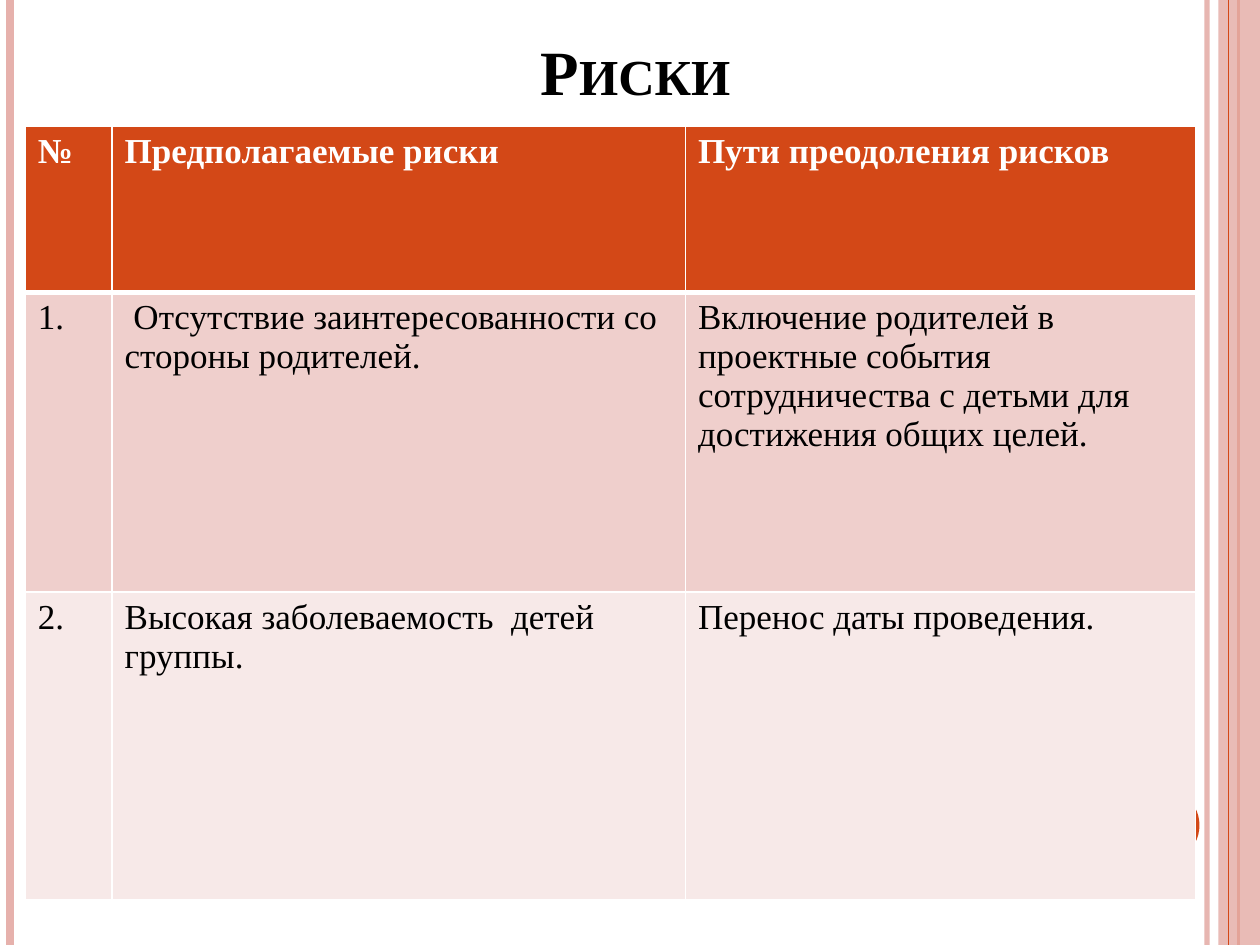
from lxml.etree import SubElement
from pptx import Presentation
from pptx.dml.color import RGBColor
from pptx.enum.shapes import MSO_CONNECTOR, MSO_SHAPE
from pptx.enum.text import MSO_ANCHOR, PP_ALIGN
from pptx.oxml import parse_xml
from pptx.oxml.ns import nsdecls, qn
from pptx.util import Inches, Pt

# Content
TITLE = "Риски"
ROWS = [
    ("№", "Предполагаемые риски", "Пути преодоления рисков"),
    ("1.", " Отсутствие заинтересованности со стороны родителей.",
     "Включение родителей в проектные события сотрудничества с детьми "
     "для достижения общих целей."),
    ("2.", "Высокая заболеваемость  детей группы.",
     "Перенос даты проведения."),
]
WIDTHS = [0.69, 4.55, 4.05]
HEIGHTS = [1.32, 2.38, 2.44]

FONT = "Times New Roman"
COLORS = {"accent": "D34817", "pink": "E6B1AC", "white": "FFFFFF",
          "black": "000000", "band1": "EFCFCC", "band2": "F7E9E8"}
FILLS = ["accent", "band1", "band2"]

# Vertical stripes: x, color, width in points, opacity in percent
BACK = [(9.58, "pink", 3, 93), (0.08, "pink", 4.5, 100),
        (9.83, "accent", 1.5, 100)]
FRONT = [(9.75, "accent", 0.75, 100)]


def rgb(name):
    return RGBColor.from_string(COLORS[name])


def fade(part, alpha):
    if alpha < 100:
        color = next(part.iter(qn("a:srgbClr")))
        SubElement(color, qn("a:alpha")).set("val", str(alpha * 1000))


def add_stripe(slide, x, color, width, alpha):
    line = slide.shapes.add_connector(
        MSO_CONNECTOR.STRAIGHT, Inches(x), 0, Inches(x), Inches(7.5))
    line.line.color.rgb = rgb(color)
    line.line.width = Pt(width)
    props = line._element.spPr
    fade(props, alpha)
    SubElement(props, qn("a:effectLst"))


def add_block(slide, kind, box, color, alpha=100):
    shape = slide.shapes.add_shape(kind, *map(Inches, box))
    shape.shadow.inherit = False
    shape.fill.solid()
    shape.fill.fore_color.rgb = rgb(color)
    shape.line.fill.background()
    fade(shape._element.spPr, alpha)


def add_run(par, text, size, color, bold):
    run = par.add_run()
    run.text = text
    font = run.font
    font.name, font.size, font.bold = FONT, Pt(size), bold
    font.color.rgb = rgb(color)
    return run


def set_edges(cell, top, bottom):
    props = cell._tc.get_or_add_tcPr()
    edges = [("L", 1), ("R", 1), ("T", top), ("B", bottom)]
    for i, (side, width) in enumerate(edges):
        props.insert(i, parse_xml(
            f'<a:ln{side} {nsdecls("a")} w="{Pt(width)}"><a:solidFill>'
            f'<a:srgbClr val="{COLORS["white"]}"/></a:solidFill></a:ln{side}>'))


def add_grid(slide):
    frame = slide.shapes.add_table(
        len(ROWS), len(WIDTHS), Inches(0.2), Inches(1),
        Inches(sum(WIDTHS)), Inches(sum(HEIGHTS)))
    table = frame.table
    for col, width in zip(table.columns, WIDTHS):
        col.width = Inches(width)
    for r, texts in enumerate(ROWS):
        table.rows[r].height = Inches(HEIGHTS[r])
        head = r == 0
        for c, text in enumerate(texts):
            cell = table.cell(r, c)
            cell.fill.solid()
            cell.fill.fore_color.rgb = rgb(FILLS[r])
            # Thick rule between the header and the body
            set_edges(cell, 3 if r == 1 else 1, 3 if head else 1)
            add_run(cell.text_frame.paragraphs[0], text, 20,
                    "white" if head else "black", head)


def main():
    prs = Presentation()
    prs.slide_width, prs.slide_height = Inches(10), Inches(7.5)
    slide = prs.slides.add_slide(prs.slide_layouts[5])

    # Side decoration
    for stripe in BACK:
        add_stripe(slide, *stripe)
    add_block(slide, MSO_SHAPE.RECTANGLE, (9.67, 0, 0.33, 7.5), "pink", 87)
    for stripe in FRONT:
        add_stripe(slide, *stripe)
    add_block(slide, MSO_SHAPE.OVAL, (8.92, 6.25, 0.6, 0.6), "accent")

    # Title
    title = slide.shapes.title
    title.left, title.top = Inches(0.91), Inches(0)
    title.width, title.height = Inches(8.27), Inches(0.91)
    title.text_frame.vertical_anchor = MSO_ANCHOR.BOTTOM
    par = title.text_frame.paragraphs[0]
    par.alignment = PP_ALIGN.CENTER
    run = add_run(par, TITLE, 36, "black", True)
    run.font._element.set("cap", "small")

    # Risk table
    add_grid(slide)
    prs.save("out.pptx")


if __name__ == "__main__":
    main()
